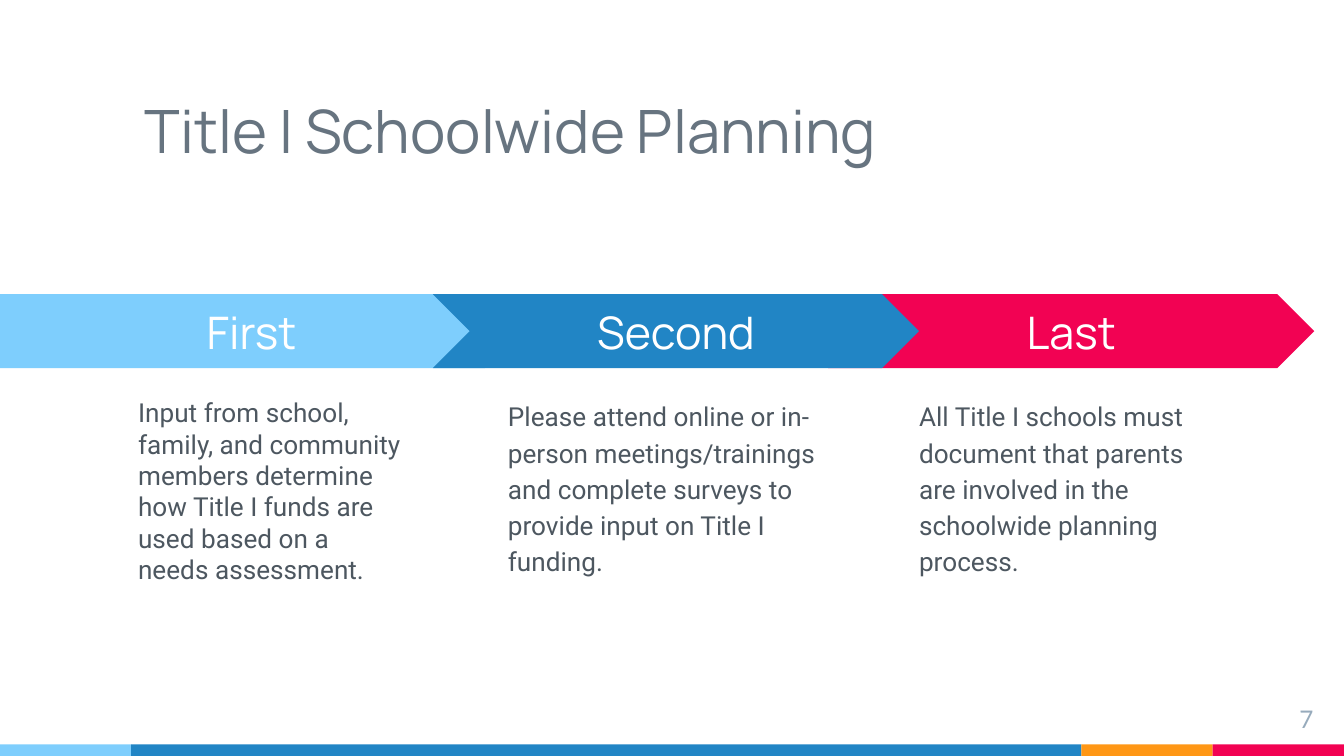
from dataclasses import dataclass

from pptx import Presentation
from pptx.dml.color import RGBColor as Rgb
from pptx.enum.shapes import MSO_SHAPE as Kind
from pptx.enum.text import MSO_ANCHOR as Anchor, PP_ALIGN as Align
from pptx.util import Cm, Pt


@dataclass(frozen=True)
class Theme:
    sky: str = "7ECEFD"
    blue: str = "2185C5"
    amber: str = "FF9715"
    red: str = "F20253"
    white: str = "FFFFFF"
    slate: str = "677480"
    ink: str = "4D5760"
    mist: str = "97ABBC"
    head: str = "Manrope"
    body: str = "Roboto"
    foot: str = "Lato"
    title: int = 32
    label: int = 24
    text: int = 14
    page: int = 13


@dataclass(frozen=True)
class Box:
    left: float
    top: float
    width: float
    height: float

    def args(self) -> tuple:
        return tuple(Cm(v) for v in (self.left, self.top, self.width, self.height))


@dataclass(frozen=True)
class Step:
    name: str
    note: str
    kind: Kind
    fill: str
    arrow: Box
    area: Box
    inset: float = 0.25
    pitch: float = 1.15


LOOK = Theme()
WIDE, HIGH = 25.4, 14.29
BAND, TALL = 5.56, 1.4
SPAN = 9.19
EDGE, STRIP = 2.48, 0.22

STEPS = (
    Step("Last",
         "All Title I schools must document that parents are involved in the "
         "schoolwide planning process.",
         Kind.CHEVRON, LOOK.red, Box(15.65, BAND, SPAN, TALL),
         Box(17.12, 7.24, 6.22, 5.56)),
    Step("First",
         "Input from school, family, and community members determine how "
         "Title I funds are used based on a needs assessment.",
         Kind.PENTAGON, LOOK.sky, Box(0, BAND, 9.86, TALL),
         Box(2.36, 7.37, 5.54, 3.84), inset=0.13, pitch=1.0),
    Step("Second",
         "Please attend online or in-person meetings/trainings and complete "
         "surveys to provide input on Title I funding.",
         Kind.CHEVRON, LOOK.blue, Box(8.18, BAND, SPAN, TALL),
         Box(9.35, 7.24, 6.45, 5.69)),
)


def write(shape, text: str, *, font: str, size: int, color: str,
          align=Align.LEFT, anchor=Anchor.TOP, inset: float = 0.25,
          pitch: float = 1.0) -> None:
    frame = shape.text_frame
    frame.word_wrap = True
    frame.vertical_anchor = anchor
    frame.margin_left = frame.margin_right = Cm(0.25)
    frame.margin_top = frame.margin_bottom = Cm(inset)
    para = frame.paragraphs[0]
    para.alignment = align
    para.line_spacing = pitch
    run = para.add_run()
    run.text = text
    run.font.name = font
    run.font.size = Pt(size)
    run.font.color.rgb = Rgb.from_string(color)


def block(slide, kind: Kind, box: Box, fill: str):
    shape = slide.shapes.add_shape(kind, *box.args())
    shape.shadow.inherit = False
    shape.fill.solid()
    shape.fill.fore_color.rgb = Rgb.from_string(fill)
    shape.line.fill.background()
    return shape


def label(slide, box: Box, text: str, **form) -> None:
    write(slide.shapes.add_textbox(*box.args()), text, **form)


def stripe(slide) -> None:
    left = 0
    bars = ((LOOK.sky, EDGE), (LOOK.blue, WIDE - 3 * EDGE),
            (LOOK.amber, EDGE), (LOOK.red, EDGE))
    for fill, width in bars:
        block(slide, Kind.RECTANGLE, Box(left, HIGH - STRIP, width, STRIP), fill)
        left += width


def stage(slide, step: Step) -> None:
    arrow = block(slide, step.kind, step.arrow, step.fill)
    arrow.adjustments[0] = 0.5
    write(arrow, step.name, font=LOOK.head, size=LOOK.label, color=LOOK.white,
          align=Align.CENTER, anchor=Anchor.MIDDLE)
    label(slide, step.area, step.note, font=LOOK.body, size=LOOK.text,
          color=LOOK.ink, inset=step.inset, pitch=step.pitch)


def main() -> None:
    deck = Presentation()
    deck.slide_width, deck.slide_height = Cm(WIDE), Cm(HIGH)
    slide = deck.slides.add_slide(deck.slide_layouts[6])
    stripe(slide)
    label(slide, Box(2.49, 0.99, 17.96, 2.39), "Title I Schoolwide Planning",
          font=LOOK.head, size=LOOK.title, color=LOOK.slate, anchor=Anchor.BOTTOM)
    for step in STEPS:
        stage(slide, step)
    label(slide, Box(23.55, 13.06, 1.52, 0.86), "7", font=LOOK.foot,
          size=LOOK.page, color=LOOK.mist, align=Align.RIGHT)
    deck.save("out.pptx")


if __name__ == "__main__":
    main()
